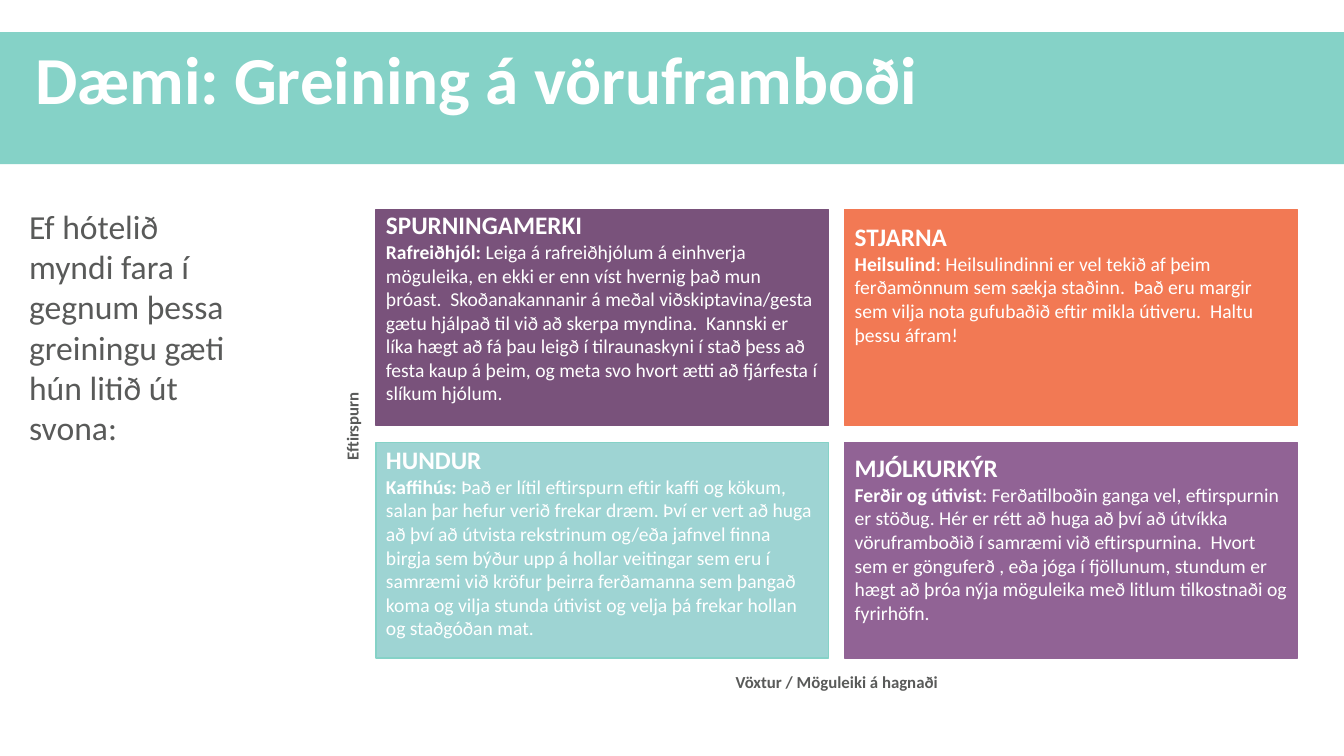
"""Build the product portfolio analysis slide with its four-quadrant matrix."""
from pptx import Presentation
from pptx.dml.color import RGBColor
from pptx.enum import shapes, text
from pptx.util import Pt

WHITE = RGBColor(0xFF, 0xFF, 0xFF)
GREY = RGBColor(0x59, 0x5A, 0x59)
MINT = RGBColor(0x85, 0xD2, 0xC7)
PALE_TEAL = RGBColor(0x9E, 0xD4, 0xD3)
PLUM = RGBColor(0x79, 0x52, 0x7B)
ORANGE = RGBColor(0xF2, 0x79, 0x54)
VIOLET = RGBColor(0x91, 0x63, 0x95)

MATRIX_LEFT, MATRIX_TOP = 268.6, 149.8
CELL_WIDTH, CELL_HEIGHT = 323.3, 154.1
COLUMN_STEP, ROW_STEP = 334.8, 166.3


def add_run(paragraph, words, size, color, bold=False):
    run = paragraph.add_run()
    run.text = words
    run.font.name = "Calibri"
    run.font.size = Pt(size)
    run.font.bold = bold
    run.font.color.rgb = color


def add_rectangle(left, top, width, height, fill):
    shape = slide.shapes.add_shape(
        shapes.MSO_SHAPE.RECTANGLE, Pt(left), Pt(top), Pt(width), Pt(height))
    shape.shadow.inherit = False
    shape.fill.solid()
    shape.fill.fore_color.rgb = fill
    return shape


presentation = Presentation()
presentation.slide_width = Pt(960)
presentation.slide_height = Pt(540)
slide = presentation.slides.add_slide(presentation.slide_layouts[6])

banner = add_rectangle(0, 23, 960, 94.3, MINT)
banner.line.fill.background()

quadrants = [
    (0, 0, PLUM, PLUM, 0, "SPURNINGAMERKI", "Rafreiðhjól:",
     " Leiga á rafreiðhjólum á einhverja möguleika, en ekki er enn víst hvernig "
     "það mun þróast.  Skoðanakannanir á meðal viðskiptavina/gesta gætu hjálpað "
     "til við að skerpa myndina.  Kannski er líka hægt að fá þau leigð í "
     "tilraunaskyni í stað þess að festa kaup á þeim, og meta svo hvort ætti að "
     "fjárfesta í slíkum hjólum."),
    (1, 0, ORANGE, ORANGE, 8.5, "STJARNA", "Heilsulind",
     ": Heilsulindinni er vel tekið af þeim ferðamönnum sem sækja staðinn.  Það "
     "eru margir sem vilja nota gufubaðið eftir mikla útiveru.  Haltu þessu áfram!"),
    (0, 1, PALE_TEAL, MINT, 1.5, "HUNDUR", "Kaffihús: ",
     "Það er lítil eftirspurn eftir kaffi og kökum, salan þar hefur verið frekar "
     "dræm. Því er vert að huga að því að útvista rekstrinum og/eða jafnvel finna "
     "birgja sem býður upp á hollar veitingar sem eru í samræmi við kröfur þeirra "
     "ferðamanna sem þangað koma og vilja stunda útivist og velja þá frekar hollan "
     "og staðgóðan mat."),
    (1, 1, VIOLET, VIOLET, 7.2, "MJÓLKURKÝR", "Ferðir og útivist",
     ": Ferðatilboðin ganga vel, eftirspurnin er stöðug. Hér er rétt að huga að "
     "því að útvíkka vöruframboðið í samræmi við eftirspurnina.  Hvort sem er "
     "gönguferð , eða jóga í fjöllunum, stundum er hægt að þróa nýja möguleika með "
     "litlum tilkostnaði og fyrirhöfn."),
]
for column, row, fill, outline, inset, heading, product, description in quadrants:
    quadrant = add_rectangle(
        MATRIX_LEFT + column * COLUMN_STEP, MATRIX_TOP + row * ROW_STEP,
        CELL_WIDTH, CELL_HEIGHT, fill)
    quadrant.line.color.rgb = outline
    quadrant.line.width = Pt(1)
    frame = quadrant.text_frame
    frame.word_wrap = True
    frame.vertical_anchor = text.MSO_ANCHOR.TOP
    frame.margin_top = Pt(inset)
    title_paragraph = frame.paragraphs[0]
    body_paragraph = frame.add_paragraph()
    title_paragraph.alignment = body_paragraph.alignment = text.PP_ALIGN.LEFT
    add_run(title_paragraph, heading, 18, WHITE, True)
    add_run(body_paragraph, product, 14, WHITE, True)
    add_run(body_paragraph, description, 14, WHITE)

labels = [
    ("Dæmi: Greining á vöruframboði", 18, 29.5, 870, 80, 48, WHITE, True, True, 0, 0.9),
    ("Ef hótelið myndi fara í gegnum þessa greiningu gæti hún litið út svona:",
     13.7, 143.3, 162, 181.4, 24, GREY, False, True, 0, 1),
    ("Eftirspurn", 219.6, 293, 64, 21.8, 12, GREY, True, False, 270, 1),
    ("Vöxtur / Möguleiki á hagnaði", 518.4, 476, 161.2, 21.8, 12, GREY, True, False, 0, 1),
]
for words, left, top, width, height, size, color, bold, wrap, rotation, spacing in labels:
    label = slide.shapes.add_textbox(Pt(left), Pt(top), Pt(width), Pt(height))
    label.rotation = rotation
    label.text_frame.word_wrap = wrap
    paragraph = label.text_frame.paragraphs[0]
    paragraph.line_spacing = spacing
    add_run(paragraph, words, size, color, bold)

presentation.save("out.pptx")
